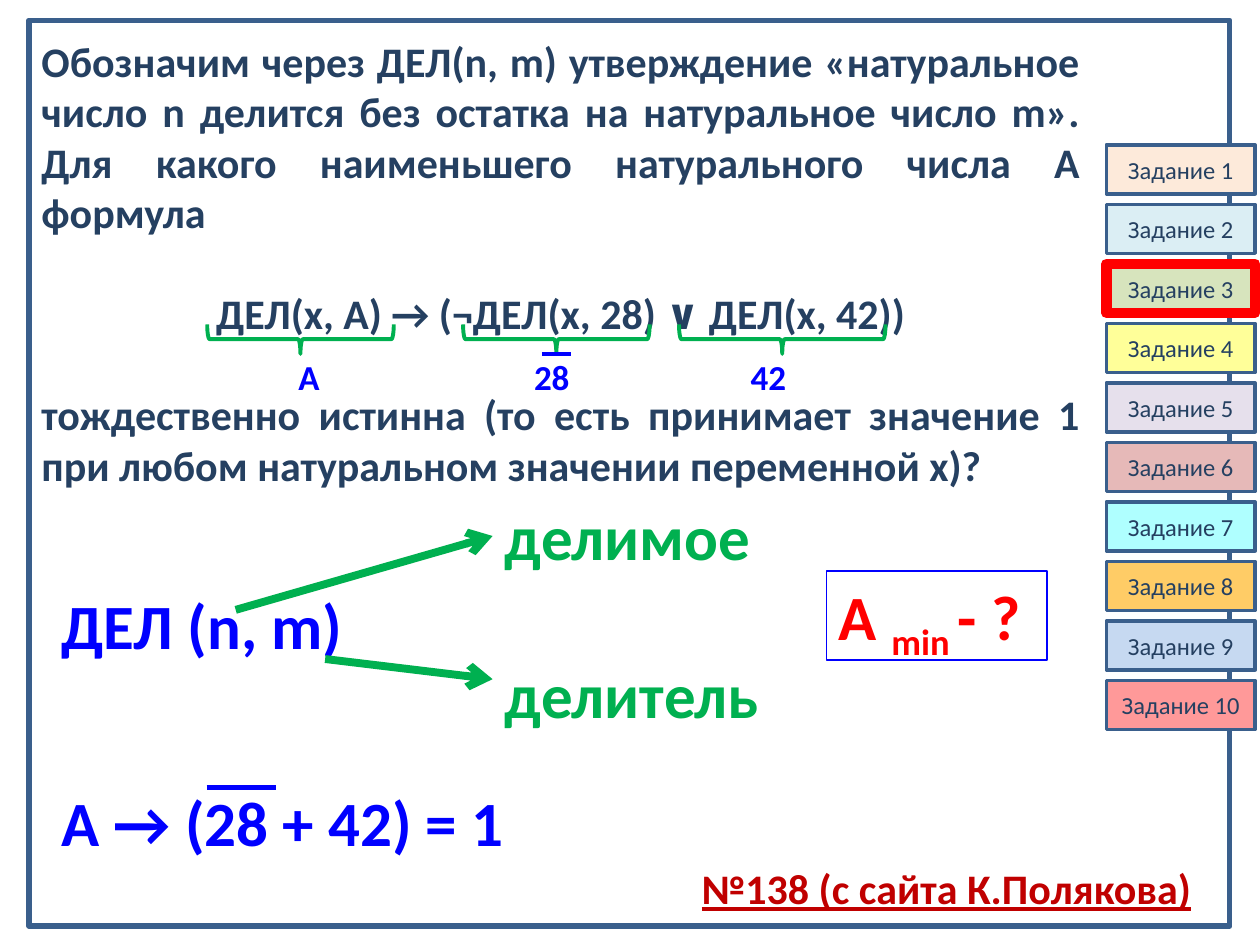
from dataclasses import dataclass

from lxml.etree import SubElement
from pptx import Presentation
from pptx.dml.color import RGBColor
from pptx.enum.shapes import MSO_CONNECTOR, MSO_SHAPE
from pptx.enum.text import MSO_ANCHOR, MSO_AUTO_SIZE, PP_ALIGN
from pptx.oxml.ns import qn
from pptx.util import Pt


@dataclass(frozen=True)
class Theme:
    font: str = "Calibri"
    dark: str = "254061"
    border: str = "3A5F8C"
    blue: str = "0000FF"
    green: str = "00B050"
    red: str = "FF0000"
    source: str = "C00000"
    tasks: tuple = ("FDEADA", "DBEEF4", "D7E4BD", "FFFF99", "E6E0EC",
                    "E6B9B8", "AFFFFF", "FFCC66", "C6D9F1", "FF9999")
    button: int = 14
    label: int = 20
    body: int = 24
    large: int = 36


@dataclass(frozen=True)
class Box:
    left: float
    top: float
    width: float
    height: float

    def inner(self, left, top, width, height):
        """A box whose position is counted from this box's corner."""
        return Box(self.left + left, self.top + top, width, height)

    def lengths(self):
        return [Pt(value) for value in (self.left, self.top, self.width, self.height)]


THEME = Theme()


def apply(target, values):
    for name, value in values.items():
        setattr(target, name, value)


def add_run(paragraph, text, size, color, **font_values):
    run = paragraph.add_run()
    run.text = text
    apply(run.font, {"name": THEME.font, "size": Pt(size), "bold": True, **font_values})
    run.font.color.rgb = RGBColor.from_string(color)
    return run


def add_text(slide, box, text, size, color, wrap=True, **font_values):
    shape = slide.shapes.add_textbox(*box.lengths())
    apply(shape.text_frame, {"word_wrap": wrap, "auto_size": MSO_AUTO_SIZE.SHAPE_TO_FIT_TEXT})
    add_run(shape.text_frame.paragraphs[0], text, size, color, **font_values)
    return shape


def add_outline(slide, kind, box, color, weight, fill=None):
    shape = slide.shapes.add_shape(kind, *box.lengths())
    shape.shadow.inherit = False
    if fill:
        shape.fill.solid()
        shape.fill.fore_color.rgb = RGBColor.from_string(fill)
    else:
        shape.fill.background()
    shape.line.color.rgb = RGBColor.from_string(color)
    shape.line.width = Pt(weight)
    return shape


def add_line(slide, start, end, color, weight, arrow=False):
    ends = [Pt(value) for value in (*start, *end)]
    connector = slide.shapes.add_connector(MSO_CONNECTOR.STRAIGHT, *ends)
    connector.line.color.rgb = RGBColor.from_string(color)
    connector.line.width = Pt(weight)
    if arrow:
        SubElement(connector.line._get_or_add_ln(), qn("a:tailEnd"), type="arrow")
    SubElement(connector._element.spPr, qn("a:effectLst"))
    return connector


def add_statement(slide, box):
    shape = slide.shapes.add_textbox(*box.lengths())
    frame = shape.text_frame
    apply(frame, {"word_wrap": True, "auto_size": MSO_AUTO_SIZE.SHAPE_TO_FIT_TEXT})
    parts = (
        ("Обозначим через ДЕЛ(n, m) утверждение «натуральное число n делится без остатка "
         "на натуральное число m». Для какого наименьшего натурального числа А формула",
         PP_ALIGN.JUSTIFY, 0),
        ("ДЕЛ(x, A) → (¬ДЕЛ(x, 28) ∨ ДЕЛ(x, 42))", PP_ALIGN.CENTER, 29),
        ("тождественно истинна (то есть принимает значение 1 при любом натуральном "
         "значении переменной х)? ", PP_ALIGN.JUSTIFY, 29),
    )
    for index, (text, alignment, gap) in enumerate(parts):
        paragraph = frame.add_paragraph() if index else frame.paragraphs[0]
        apply(paragraph, {"alignment": alignment, "space_before": Pt(gap)})
        add_run(paragraph, text, THEME.body, THEME.dark)


def add_tasks(slide, box, current):
    """Column of task buttons, with the current one framed in red."""
    height = 28
    pitch = (box.height - height) / (len(THEME.tasks) - 1)
    for index, fill in enumerate(THEME.tasks):
        number = index + 1
        color, weight = (THEME.red, 6) if number == current else (THEME.border, 2)
        shape = add_outline(slide, MSO_SHAPE.FLOWCHART_PROCESS,
                            box.inner(0, index * pitch, box.width, height),
                            color, weight, fill)
        shape.text_frame.vertical_anchor = MSO_ANCHOR.MIDDLE
        paragraph = shape.text_frame.paragraphs[0]
        paragraph.alignment = PP_ALIGN.CENTER
        properties = paragraph._p.get_or_add_pPr()
        properties.set("marL", str(Pt(27)))
        properties.set("indent", str(Pt(-27)))
        add_run(paragraph, f"Задание {number}", THEME.button, THEME.dark, bold=False)


def add_brace(slide, box):
    """Brace opening upward that fills the given wide box."""
    shift = (box.width - box.height) / 2
    upright = box.inner(shift, -shift, box.height, box.width)
    brace = add_outline(slide, MSO_SHAPE.LEFT_BRACE, upright, THEME.green, 2.25)
    brace.rotation = 270


def add_terms(slide, box):
    """Braces under the parts of the formula, with their short names."""
    terms = (("А", 0, 106.6, 45), ("28", 146.2, 106.6, 179.7), ("42", 269.6, 118, 303.5))
    for text, left, width, label_left in terms:
        add_brace(slide, box.inner(left, 0, width, 16.8))
        add_text(slide, box.inner(label_left, 14, 56, 31.5), text, THEME.label, THEME.blue)
    bar = box.inner(191.2, 16.9, 16.6, 0)
    add_line(slide, (bar.left, bar.top), (bar.left + bar.width, bar.top), THEME.blue, 2.25)


def add_division(slide, box):
    """The function with arrows to the names of its two arguments."""
    add_text(slide, box.inner(0, 51, 176.4, 51), "ДЕЛ (n, m)", THEME.large, THEME.blue, wrap=False)
    dividend, divisor = (
        add_text(slide, box.inner(253.4, top, width, 51), text,
                 THEME.large, THEME.green, wrap=False)
        for text, top, width in (("делимое", 0, 156.2), ("делитель", 90, 161.3)))
    tip = box.left + 253.4
    first = add_line(slide, (box.left + 106.6, box.top + 67.7), (tip, box.top + 25.5),
                     THEME.green, 4.5, arrow=True)
    first.end_connect(dividend, 1)
    add_line(slide, (box.left + 157.7, box.top + 95.8), (tip, box.top + 107.3),
             THEME.green, 4.5, arrow=True)


def add_question(slide, box):
    shape = add_outline(slide, MSO_SHAPE.RECTANGLE, box, THEME.blue, 0.75)
    apply(shape.text_frame, {"word_wrap": True, "auto_size": MSO_AUTO_SIZE.SHAPE_TO_FIT_TEXT,
                             "vertical_anchor": MSO_ANCHOR.TOP})
    paragraph = shape.text_frame.paragraphs[0]
    paragraph.alignment = PP_ALIGN.LEFT
    for text, baseline in (("А ", 0), ("min ", -25000), ("- ?", 0)):
        run = add_run(paragraph, text, THEME.large, THEME.red)
        if baseline:
            run.font._element.set("baseline", str(baseline))


def add_equation(slide, box):
    add_text(slide, box, "А → (28 + 42) = 1", THEME.large, THEME.blue)
    bar = box.inner(90, 5.8, 39.6, 0)
    add_line(slide, (bar.left, bar.top), (bar.left + bar.width, bar.top), THEME.blue, 3)


def main():
    presentation = Presentation()
    presentation.slide_width, presentation.slide_height = Pt(720), Pt(540)
    slide = presentation.slides.add_slide(presentation.slide_layouts[6])
    add_outline(slide, MSO_SHAPE.RECTANGLE, Box(16.6, 11.5, 686.2, 517.7), THEME.border, 3)
    add_statement(slide, Box(16.6, 16.6, 607.7, 269.3))
    add_tasks(slide, Box(632.2, 82.8, 85, 334), current=3)
    add_text(slide, Box(393.8, 489.6, 298, 36), "№138 (с сайта К.Полякова)",
             THEME.body, THEME.source, underline=True)
    add_division(slide, Box(28.1, 280.8, 414.7, 141))
    add_equation(slide, Box(28.1, 444.2, 281.5, 51))
    add_terms(slide, Box(118.4, 185.4, 387.6, 45.5))
    add_question(slide, Box(472.3, 326.2, 126, 51))
    presentation.save("out.pptx")


if __name__ == "__main__":
    main()
